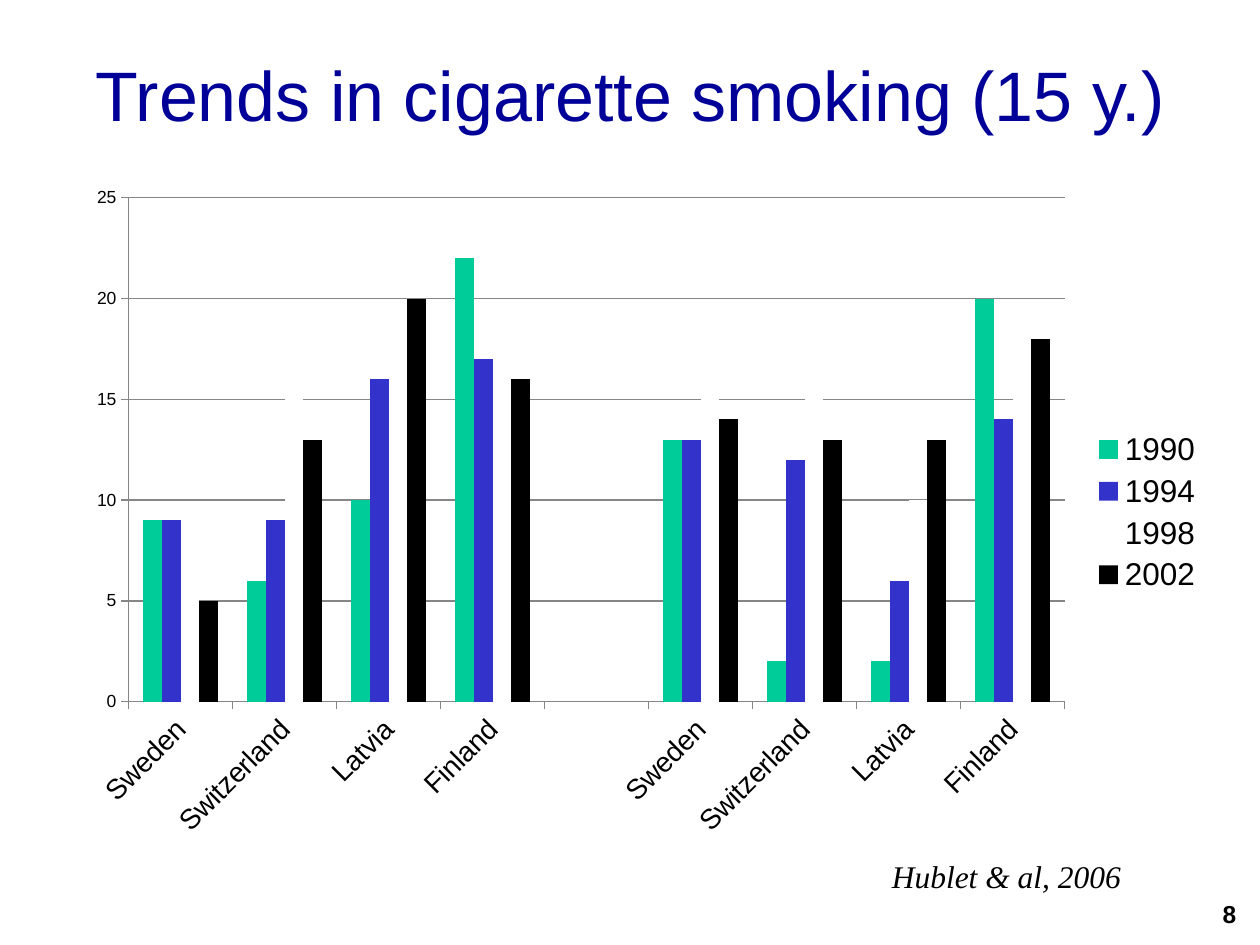
from lxml import etree
from pptx import Presentation
from pptx.chart.data import CategoryChartData
from pptx.dml.color import RGBColor
from pptx.enum import chart as charts, text
from pptx.oxml.ns import qn
from pptx.util import Inches, Pt

NAVY = RGBColor(0x00, 0x00, 0x99)
GREEN = RGBColor(0x00, 0xCC, 0x99)
BLUE = RGBColor(0x33, 0x33, 0xCC)
WHITE = RGBColor(0xFF, 0xFF, 0xFF)
BLACK = RGBColor(0x00, 0x00, 0x00)
GRAY = RGBColor(0x86, 0x86, 0x86)

COUNTRIES = ["Sweden", "Switzerland", "Latvia", "Finland"]
SURVEYS = [
    ("1990", GREEN, [9, 6, 10, 22, None, 13, 2, 2, 20]),
    ("1994", BLUE, [9, 9, 16, 17, None, 13, 12, 6, 14]),
    ("1998", WHITE, [8, 16, 18, 15, None, 16, 15, 10, 16]),
    ("2002", BLACK, [5, 13, 20, 16, None, 14, 13, 13, 18]),
]


def add_label(page, box, words, size, font="Arial", color=BLACK, bold=False,
              italic=False, align=text.PP_ALIGN.LEFT,
              anchor=text.MSO_ANCHOR.TOP, wrap=False):
    """Place one line of styled text in the given box."""
    frame = page.shapes.add_textbox(*map(Inches, box)).text_frame
    frame.word_wrap = wrap
    frame.vertical_anchor = anchor
    frame.text = words
    para = frame.paragraphs[0]
    para.alignment = align
    span = para.runs[0].font
    span.name, span.size, span.color.rgb = font, Pt(size), color
    span.bold, span.italic = bold, italic


def set_plot_layout(chart, box, plot_box):
    """Fix the inner plot area, given in slide inches, inside the chart box."""
    left, top, width, height = box
    plot_left, plot_top, plot_width, plot_height = plot_box
    area = chart._chartSpace.chart.plotArea
    for old in area.findall(qn("c:layout")):
        area.remove(old)
    layout = etree.Element(qn("c:layout"))
    manual = etree.SubElement(layout, qn("c:manualLayout"))
    settings = {
        "layoutTarget": "inner", "xMode": "edge", "yMode": "edge",
        "x": (plot_left - left) / width, "y": (plot_top - top) / height,
        "w": plot_width / width, "h": plot_height / height,
    }
    for name, value in settings.items():
        etree.SubElement(manual, qn(f"c:{name}")).set("val", str(value))
    area.insert(0, layout)


def style_axes(chart):
    """Set scale, ticks, lines and label fonts of both axes."""
    values, countries = chart.value_axis, chart.category_axis
    values.minimum_scale, values.maximum_scale, values.major_unit = 0, 25, 5
    values.has_major_gridlines = True
    values.major_gridlines.format.line.color.rgb = GRAY
    values.tick_labels.font.size = Pt(10)
    countries.tick_labels.font.size = Pt(16)
    countries._element.find(qn("c:txPr")).find(qn("a:bodyPr")).set("rot", "-2700000")
    for axis in (values, countries):
        axis.major_tick_mark = charts.XL_TICK_MARK.OUTSIDE
        axis.format.line.color.rgb = GRAY


def add_trend_chart(page, box, plot_box):
    """Place the clustered columns for two groups of countries."""
    data = CategoryChartData()
    data.categories = COUNTRIES + [""] + COUNTRIES
    for year, _, shares in SURVEYS:
        data.add_series(year, shares)
    chart = page.shapes.add_chart(charts.XL_CHART_TYPE.COLUMN_CLUSTERED,
                                  *map(Inches, box), data).chart
    chart.has_title = False
    chart.font.name, chart.font.size, chart.font.color.rgb = "Arial", Pt(10), BLACK
    plot = chart.plots[0]
    plot.gap_width, plot.overlap, plot.vary_by_categories = 150, 0, False
    for series, (_, color, _) in zip(plot.series, SURVEYS):
        series.format.fill.solid()
        series.format.fill.fore_color.rgb = color
        series.invert_if_negative = False
    style_axes(chart)
    chart.has_legend = True
    chart.legend.position = charts.XL_LEGEND_POSITION.RIGHT
    chart.legend.include_in_layout = False
    chart.legend.font.size = Pt(18)
    set_plot_layout(chart, box, plot_box)


def main():
    """Build and save the deck."""
    deck = Presentation()
    deck.slide_width, deck.slide_height = Inches(10), Inches(7.5)
    page = deck.slides.add_slide(deck.slide_layouts[6])
    middle = text.MSO_ANCHOR.MIDDLE
    add_label(page, (0.25, 0.25, 9.5, 0.98), "Trends in cigarette smoking (15 y.)", 40,
              color=NAVY, align=text.PP_ALIGN.CENTER, anchor=middle, wrap=True)
    add_label(page, (7.83, 7, 2.08, 0.5), "8", 14, bold=True,
              align=text.PP_ALIGN.RIGHT, anchor=middle)
    add_trend_chart(page, (0.59, 1.39, 9.06, 5.35), (1.02, 1.57, 7.43, 4))
    add_label(page, (6.98, 6.75, 2.04, 0.4), "Hublet & al, 2006", 18,
              font="Times New Roman", italic=True)
    deck.save("out.pptx")


if __name__ == "__main__":
    main()
